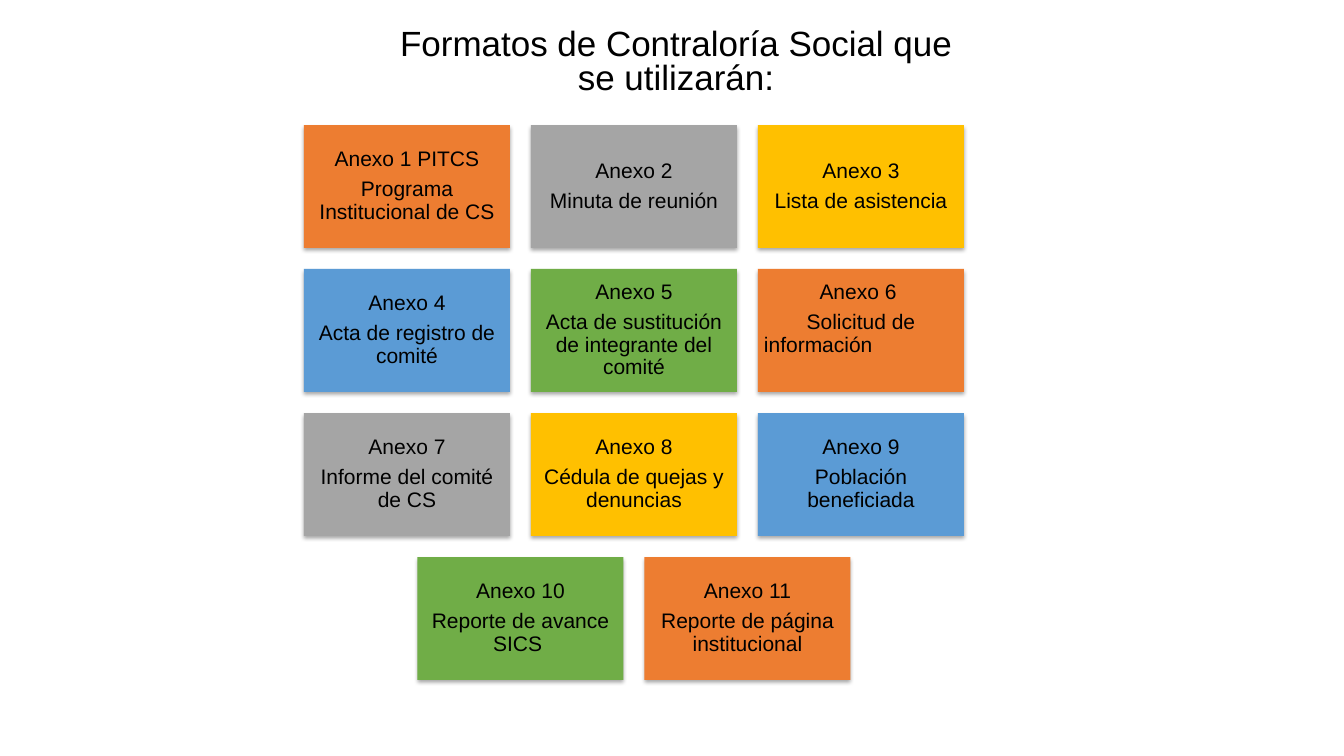
from lxml import etree
from pptx import Presentation
from pptx.dml.color import RGBColor
from pptx.enum import shapes, text
from pptx.oxml.ns import nsdecls
from pptx.util import Emu, Pt

ORANGE = RGBColor(0xED, 0x7D, 0x31)
GRAY = RGBColor(0xA5, 0xA5, 0xA5)
YELLOW = RGBColor(0xFF, 0xC0, 0x00)
BLUE = RGBColor(0x5B, 0x9B, 0xD5)
GREEN = RGBColor(0x70, 0xAD, 0x47)
BLACK = RGBColor(0, 0, 0)
CYCLE = [ORANGE, GRAY, YELLOW, BLUE, GREEN]

TITLE = "Formatos de Contraloría Social que se utilizarán:"
ANNEXES = [
    ["Anexo 1 PITCS", "Programa Institucional de CS"],
    ["Anexo 2", "Minuta de reunión"],
    ["Anexo 3", "Lista de asistencia"],
    ["Anexo 4", "Acta de registro de comité"],
    ["Anexo 5", "Acta de sustitución de integrante del comité"],
    ["Anexo 6 ", "Solicitud de", "información"],
    ["Anexo 7", "Informe del comité de CS"],
    ["Anexo 8", "Cédula de quejas y denuncias"],
    ["Anexo 9", "Población beneficiada"],
    ["Anexo 10", "Reporte de avance SICS "],
    ["Anexo 11", "Reporte de página institucional"],
]

COLUMNS = 3
CARD_W, CARD_H, GAP = 206, 123, 21
GRID_CENTER, GRID_TOP = 634, 125
INSET = 6
EXTRA_LINE = 23  # room kept free below a card whose text ends at the left


def px(n):
    return Emu(round(n * 914400 / 100.8))


def style(paragraph, size, spacing, align=text.PP_ALIGN.CENTER):
    paragraph.alignment = align
    paragraph.line_spacing = spacing
    paragraph.font.size = Pt(size)
    paragraph.font.name = "Arial"
    paragraph.font.color.rgb = BLACK


def add_soft_shadow(card):
    card.shadow.inherit = False
    effects = card._element.spPr.find(
        "{http://schemas.openxmlformats.org/drawingml/2006/main}effectLst")
    effects.append(etree.fromstring(
        f'<a:outerShdw {nsdecls("a")} blurRad="39370" dist="22860" dir="5400000" '
        'rotWithShape="0"><a:srgbClr val="000000"><a:alpha val="35000"/>'
        '</a:srgbClr></a:outerShdw>'))


def add_card(slide, x, y, color, lines):
    card = slide.shapes.add_shape(
        shapes.MSO_SHAPE.RECTANGLE, px(x), px(y), px(CARD_W), px(CARD_H))
    card.fill.solid()
    card.fill.fore_color.rgb = color
    card.line.fill.background()
    add_soft_shadow(card)
    frame = card.text_frame
    frame.word_wrap = True
    frame.vertical_anchor = text.MSO_ANCHOR.MIDDLE
    frame.margin_left = frame.margin_right = frame.margin_top = px(INSET)
    frame.margin_bottom = px(INSET + EXTRA_LINE * (len(lines) - 2))
    frame.text = "\n".join(lines)
    for i, paragraph in enumerate(frame.paragraphs):
        style(paragraph, 15, 0.9,
              text.PP_ALIGN.LEFT if i == 2 else text.PP_ALIGN.CENTER)
        paragraph.space_after = Pt(5.25 if i == 0 else 0)


def add_title(slide):
    title = slide.shapes.add_textbox(px(369), px(28), px(614), px(74))
    frame = title.text_frame
    frame.word_wrap = True
    frame.vertical_anchor = text.MSO_ANCHOR.BOTTOM
    frame.text = TITLE
    style(frame.paragraphs[0], 25, 0.8)


def main():
    deck = Presentation()
    deck.slide_width, deck.slide_height = px(1344), px(756)
    slide = deck.slides.add_slide(deck.slide_layouts[6])
    for i, lines in enumerate(ANNEXES):
        row, column = divmod(i, COLUMNS)
        in_row = min(COLUMNS, len(ANNEXES) - row * COLUMNS)
        row_width = in_row * (CARD_W + GAP) - GAP
        x = GRID_CENTER - row_width / 2 + column * (CARD_W + GAP)
        y = GRID_TOP + row * (CARD_H + GAP)
        add_card(slide, x, y, CYCLE[i % len(CYCLE)], lines)
    add_title(slide)
    deck.save("out.pptx")


if __name__ == "__main__":
    main()
